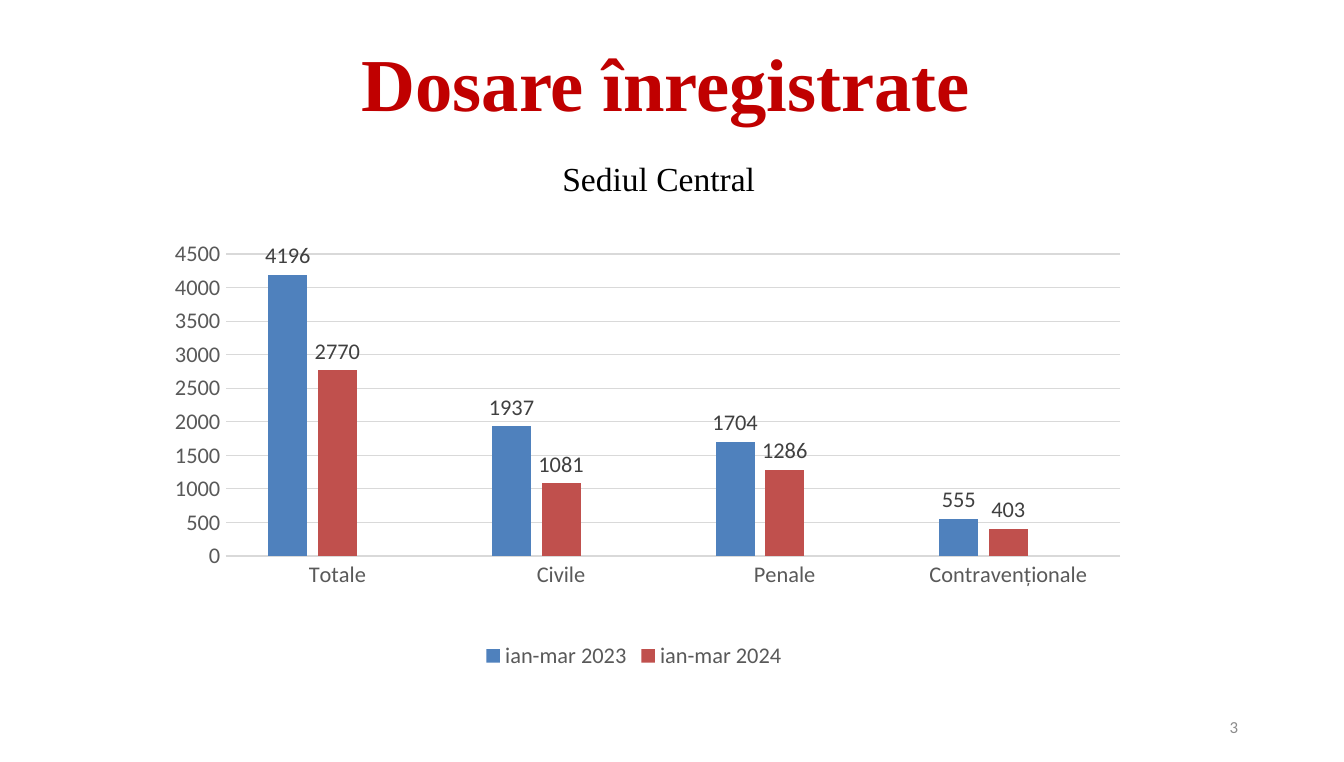
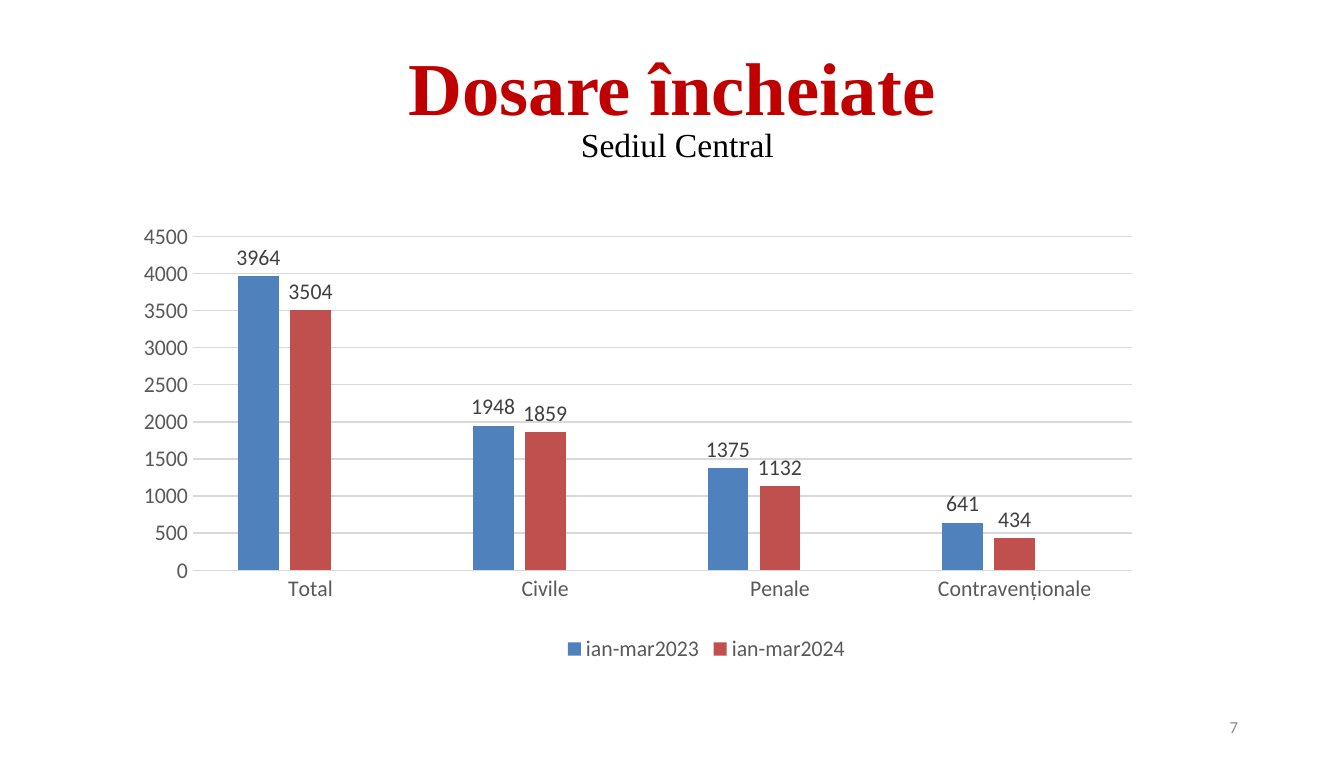
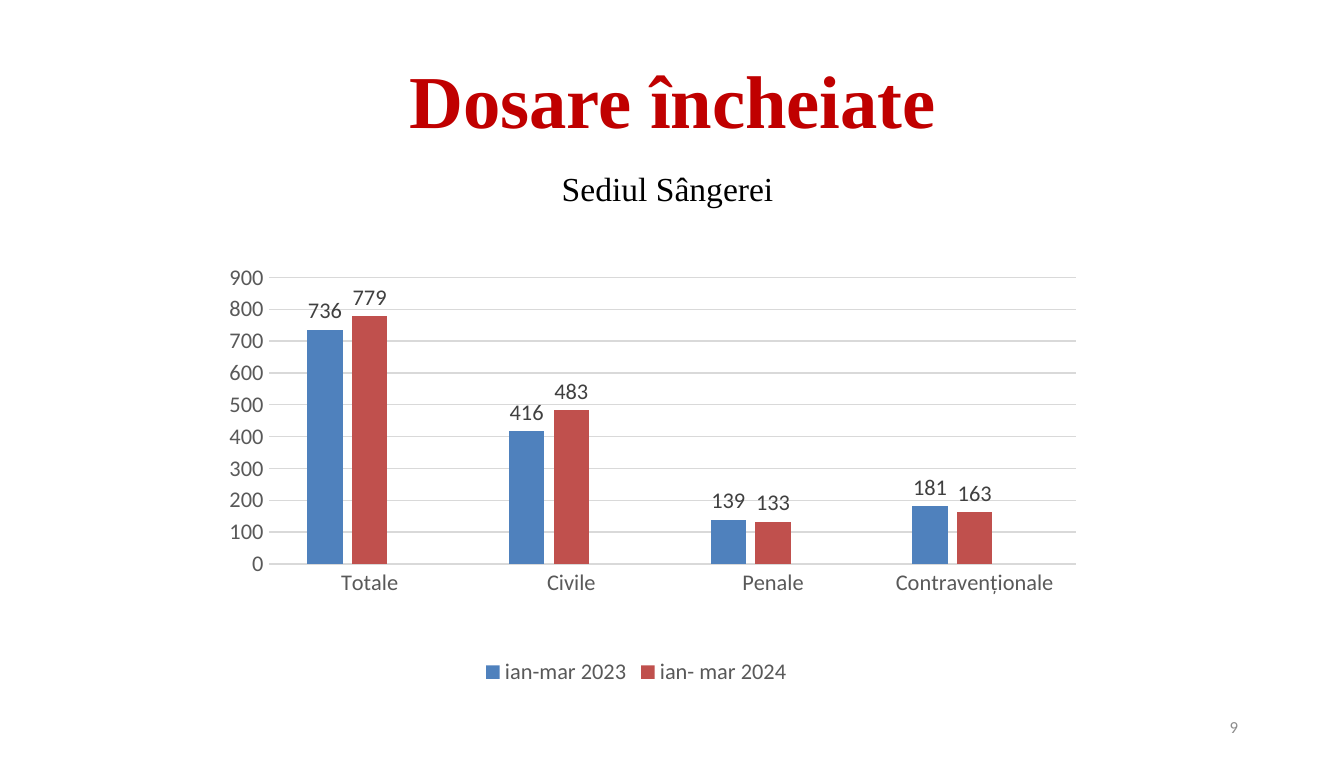
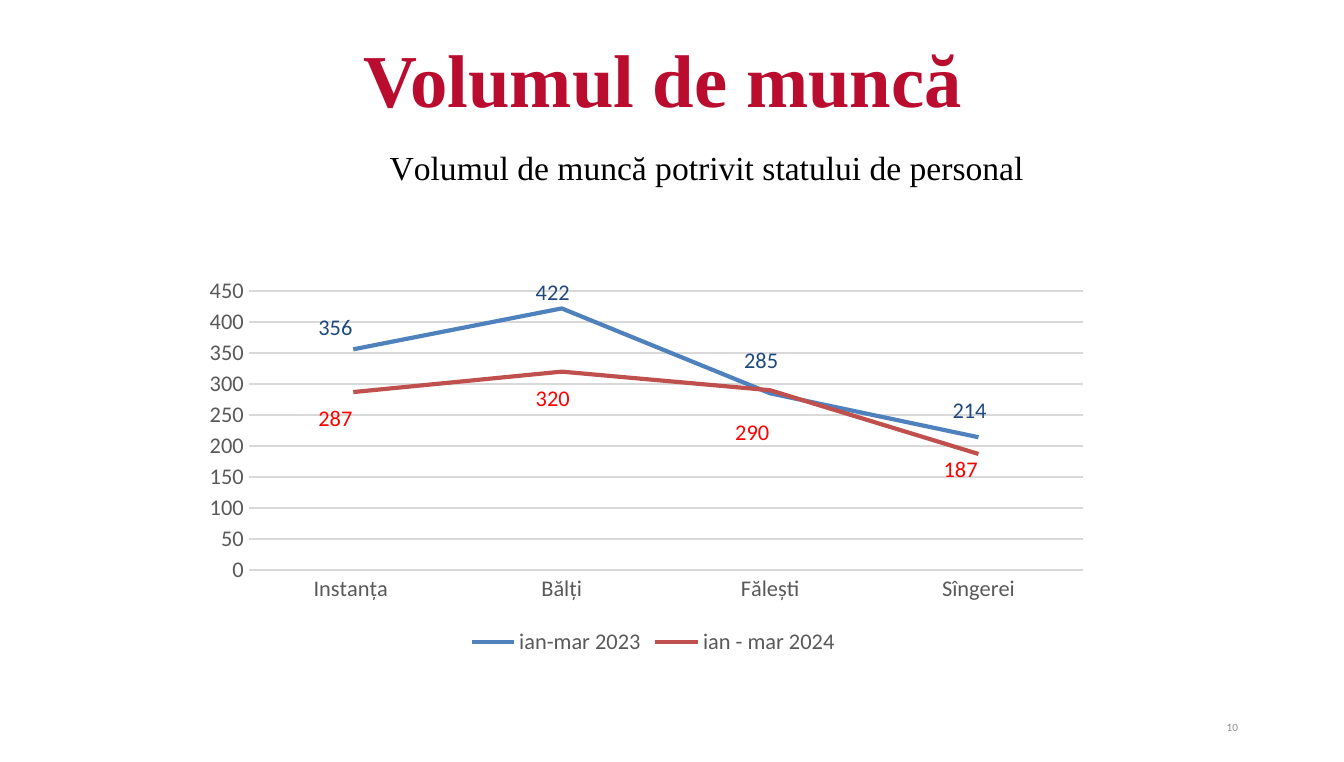
from lxml.etree import SubElement
from pptx import Presentation
from pptx.chart.data import CategoryChartData
from pptx.dml.color import RGBColor
from pptx.enum.chart import XL_CHART_TYPE as Kind, XL_LABEL_POSITION as LabelPos
from pptx.enum.chart import XL_LEGEND_POSITION as LegendPos, XL_MARKER_STYLE as Marker
from pptx.enum.chart import XL_TICK_MARK as Tick
from pptx.enum.text import MSO_ANCHOR as Anchor, MSO_AUTO_SIZE as AutoSize, PP_ALIGN as Align
from pptx.oxml import parse_xml
from pptx.oxml.ns import nsdecls, qn
from pptx.util import Inches, Pt

COLORS = {
    "title": "C00000", "workload": "BA0C2F", "text": "000000", "page": "8C8C8C",
    "axis": "595959", "grid": "D9D9D9", "label": "404040",
    "label_2023": "1F497D", "label_2024": "FF0000",
}
SERIES_COLORS = ["4F81BD", "C0504D", "9BBB59"]
SERIF, SANS = "Times New Roman", "Calibri"
CASE_TYPES = ["Civile", "Penale", "Contravenționale"]
PAGE_BOX = (7.06, 5.26, 2.25, 0.3)
WORKLOAD_LABELS = [
    ("label_2023", [(-0.02, -0.04), (-0.01, -0.03), (-0.01, -0.06), (-0.01, -0.05)]),
    ("label_2024", [(-0.02, 0.05), (-0.01, 0.05), (-0.02, 0.08), (-0.02, 0.03)]),
]


def rgb(name):
    """Return the colour stored under a name."""
    return RGBColor.from_string(COLORS[name])


def style(font, size, color, face=SANS, bold=False):
    """Format a font."""
    font.size, font.name, font.bold = Pt(size), face, bold
    font.color.rgb = rgb(color)


def write(frame, text, align=None, spacing=None, **look):
    """Write one formatted paragraph into a text frame."""
    paragraph = frame.paragraphs[0]
    if align is not None:
        paragraph.alignment = align
    if spacing:
        paragraph.line_spacing = spacing
    run = paragraph.add_run()
    run.text = text
    style(run.font, **look)


def add_title(slide, box, text, align=Align.CENTER, color="title", anchor=Anchor.MIDDLE):
    """Place and fill the title placeholder."""
    title = slide.shapes.title
    title.left, title.top, title.width, title.height = map(Inches, box)
    frame = title.text_frame
    frame.auto_size, frame.word_wrap = AutoSize.NONE, True
    frame.vertical_anchor = anchor
    write(frame, text, align, 0.9, size=40, color=color, face=SERIF, bold=True)


def add_text(slide, box, text, anchor=Anchor.TOP, indent=0, **look):
    """Add a wrapped text box."""
    frame = slide.shapes.add_textbox(*map(Inches, box)).text_frame
    frame.word_wrap, frame.vertical_anchor = True, anchor
    frame.margin_left = Inches(0.1 + indent)
    write(frame, text, **look)


def add_page_number(slide, number, size=9):
    """Add the page number at the lower right."""
    add_text(slide, PAGE_BOX, number, Anchor.MIDDLE, align=Align.RIGHT, size=size, color="page")


def set_layout(parent, index, **values):
    """Give a chart part a manual layout as fractions of the chart."""
    for old in parent.findall(qn("c:layout")):
        parent.remove(old)
    layout = parse_xml(f"<c:layout {nsdecls('c')}/>")
    manual = SubElement(layout, qn("c:manualLayout"))
    for tag, value in values.items():
        SubElement(manual, qn(f"c:{tag}")).set("val", str(value))
    parent.insert(index, layout)


def format_axes(chart):
    """Format both axes and the gridlines."""
    categories, values = chart.category_axis, chart.value_axis
    for axis in (categories, values):
        axis.major_tick_mark = axis.minor_tick_mark = Tick.NONE
        style(axis.tick_labels.font, 12, "axis")
    values.format.line.fill.background()
    values.has_major_gridlines = True
    for line in (categories.format.line, values.major_gridlines.format.line):
        line.color.rgb, line.width = rgb("grid"), Pt(0.75)


def format_legend(chart, corner):
    """Show the legend below the plot without the empty third series."""
    chart.has_legend = True
    chart.legend.position = LegendPos.BOTTOM
    chart.legend.include_in_layout = False
    style(chart.legend.font, 12, "axis")
    legend = chart.element.find(".//" + qn("c:legend"))
    if corner:
        set_layout(legend, 1, xMode="edge", yMode="edge", x=corner[0], y=corner[1])
    legend.insert(1, parse_xml(
        f'<c:legendEntry {nsdecls("c")}><c:idx val="2"/><c:delete val="1"/></c:legendEntry>'))


def format_title(chart, title, corner):
    """Show the chart title, if there is one."""
    chart.has_title = bool(title)
    if title:
        write(chart.chart_title.text_frame, title, size=18, color="text", face=SERIF)
        chart.chart_title.include_in_layout = False
        set_layout(chart.element.find(".//" + qn("c:title")), 1,
                   xMode="edge", yMode="edge", x=corner[0], y=corner[1])


def add_chart(slide, box, kind, categories, series, plot, label_pos,
              title=None, title_at=None, legend_at=None):
    """Add a chart comparing the two quarters."""
    data = CategoryChartData()
    data.categories = categories
    for name, values in [*series, ("Series 3", [None] * len(categories))]:
        data.add_series(name, values)
    chart = slide.shapes.add_chart(kind, *map(Inches, box), data).chart
    style(chart.font, 10, "text")
    format_title(chart, title, title_at)
    format_axes(chart)
    format_legend(chart, legend_at)
    chart.plots[0].vary_by_categories = False
    for quarter, color in zip(chart.plots[0].series, SERIES_COLORS):
        labels = quarter.data_labels
        labels.show_value, labels.position = True, label_pos
        style(labels.font, 12, "label")
        target = quarter.format.line if kind == Kind.LINE else quarter.format.fill
        if kind != Kind.LINE:
            target.solid()
            target.fore_color.rgb = RGBColor.from_string(color)
        else:
            target.color.rgb, target.width = RGBColor.from_string(color), Pt(2.25)
    for leader in chart.element.iter(qn("c:showLeaderLines")):
        leader.set("val", "0")
    x, y, width, height = plot
    set_layout(chart.element.find(".//" + qn("c:plotArea")), 0, layoutTarget="inner",
               xMode="edge", yMode="edge", x=x, y=y, w=width, h=height)
    return chart


def add_columns(slide, box, total, series, plot, **parts):
    """Add the clustered columns of case counts."""
    chart = add_chart(slide, box, Kind.COLUMN_CLUSTERED, [total, *CASE_TYPES], series,
                      plot, LabelPos.OUTSIDE_END, **parts)
    chart.plots[0].gap_width, chart.plots[0].overlap = 219, -27


def add_workload_lines(slide, box, categories, series, plot, **parts):
    """Add the workload lines with shifted, coloured point labels."""
    chart = add_chart(slide, box, Kind.LINE, categories, series, plot, LabelPos.CENTER, **parts)
    for quarter in chart.plots[0].series:
        quarter.smooth, quarter.marker.style = False, Marker.NONE
    for quarter, (color, offsets) in zip(chart.plots[0].series, WORKLOAD_LABELS):
        for index in range(len(offsets)):
            label = quarter.points[index].data_label
            style(label.font, 12, color)
            label.position = LabelPos.CENTER
    shifts = [shift for _, offsets in WORKLOAD_LABELS for shift in offsets]
    for label, (x, y) in zip(list(chart.element.iter(qn("c:dLbl"))), shifts):
        set_layout(label, 1, x=x, y=y)


def registered_cases(slide):
    """Build the slide of registered cases at the central office."""
    add_title(slide, (2.59, 0.35, 4.98, 0.6), "Dosare înregistrate", Align.LEFT)
    add_page_number(slide, "3")
    add_columns(slide, (1.1, 1.01, 7.24, 4.01), "Totale",
                [("ian-mar 2023", [4196, 1937, 1704, 555]),
                 ("ian-mar 2024", [2770, 1081, 1286, 403])],
                (0.08, 0.22, 0.92, 0.56), title="Sediul Central", title_at=(0.42, 0.03))


def closed_cases_central(slide):
    """Build the slide of closed cases at the central office."""
    add_title(slide, (0.5, 0.42, 9, 0.52), "Dosare încheiate")
    add_text(slide, (0.48, 0.91, 9, 0.44), "Sediul Central", indent=0.12,
             align=Align.CENTER, spacing=0.9, size=18, color="text", face=SERIF)
    add_page_number(slide, "7")
    add_columns(slide, (1.07, 1.48, 7.81, 3.5), "Total",
                [("ian-mar2023", [3964, 1948, 1375, 641]),
                 ("ian-mar2024", [3504, 1859, 1132, 434])],
                (0.02, 0.08, 0.92, 0.71), legend_at=(0.38, 0.93))


def closed_cases_sangerei(slide):
    """Build the slide of closed cases at the Sângerei office."""
    add_title(slide, (0.88, 0.43, 8.25, 0.7), "Dosare încheiate")
    add_page_number(slide, "9")
    add_columns(slide, (1.4, 1.04, 6.67, 4.1), "Totale",
                [("ian-mar 2023", [736, 416, 139, 181]),
                 ("ian- mar 2024", [779, 483, 133, 163])],
                (0.09, 0.25, 0.9, 0.52), title="Sediul Sângerei", title_at=(0.41, 0.04))


def workload(slide):
    """Build the slide of workload by office."""
    add_title(slide, (0.75, 0.46, 8.5, 0.51), "Volumul de muncă ",
              color="workload", anchor=Anchor.BOTTOM)
    add_page_number(slide, "10", size=6)
    add_workload_lines(slide, (1.52, 0.97, 6.67, 3.99),
                       ["Instanța ", "Bălți", "Fălești", "Sîngerei"],
                       [("ian-mar 2023", [356, 422, 285, 214]),
                        ("ian - mar 2024", [287, 320, 290, 187])],
                       (0.05, 0.3, 0.93, 0.52), legend_at=(0.29, 0.92),
                       title="Volumul de muncă potrivit statului de personal",
                       title_at=(0.2, 0.02))


def main():
    """Build and save the presentation."""
    deck = Presentation()
    deck.slide_width, deck.slide_height = Inches(10), Inches(5.67)
    for build in (registered_cases, closed_cases_central, closed_cases_sangerei, workload):
        build(deck.slides.add_slide(deck.slide_layouts[5]))
    deck.save("out.pptx")


if __name__ == "__main__":
    main()
